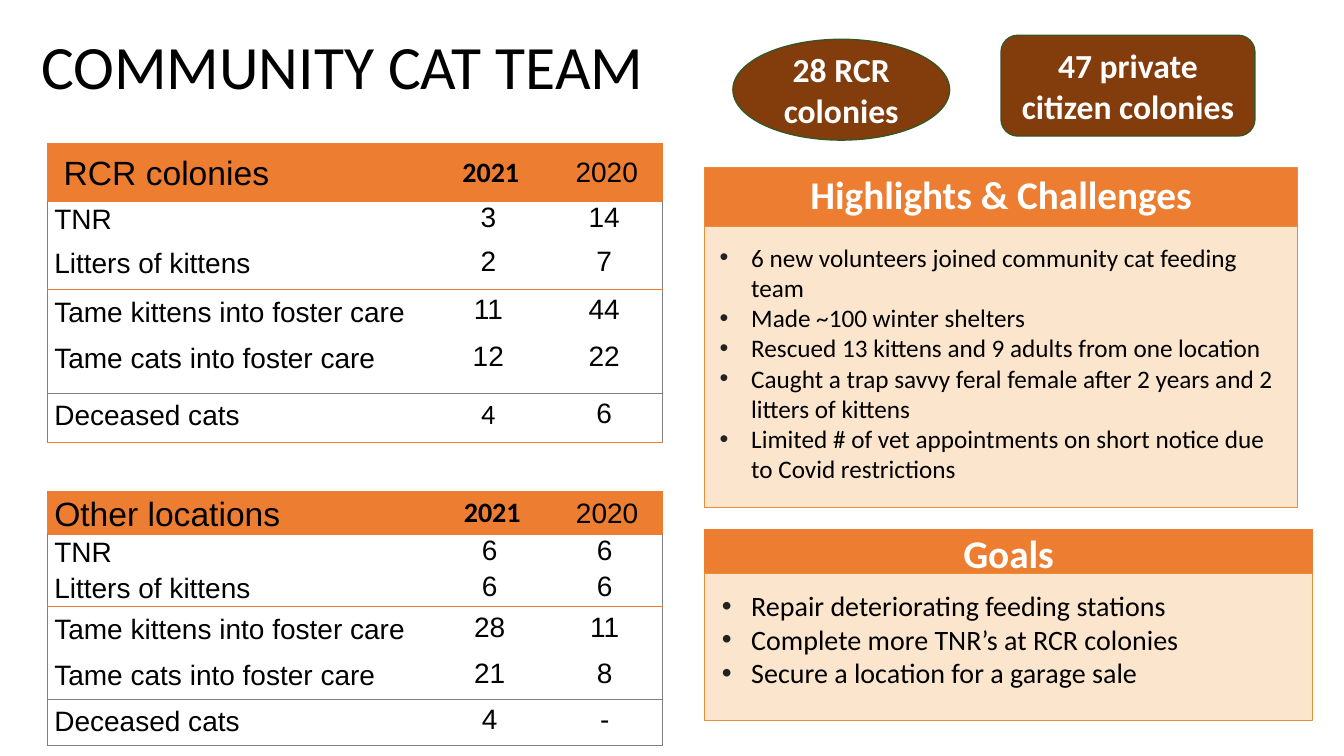
"""Build the Community Cat Team slide."""
from lxml.etree import SubElement
from pptx import Presentation
from pptx.dml.color import RGBColor
from pptx.enum.shapes import MSO_SHAPE
from pptx.enum.text import MSO_ANCHOR, PP_ALIGN
from pptx.oxml.ns import qn
from pptx.util import Pt

ORANGE, PALE, AMBER = "ED7D31", "FCE5CD", "E69138"
BROWN, GREEN, GREY = "833C0B", "385623", "808080"
BLACK, WHITE, BULLET = "000000", "FFFFFF", "222222"


def rgb(value):
    return RGBColor.from_string(value)


class SlideBuilder:
    def __init__(self, slide, font="Calibri", table_font="Arial"):
        self.slide = slide
        self.font = font
        self.table_font = table_font

    def frame(self, frame, margins, anchor):
        frame.word_wrap = True
        frame.vertical_anchor = anchor
        (frame.margin_left, frame.margin_top,
         frame.margin_right, frame.margin_bottom) = map(Pt, margins)

    def run(self, paragraph, text, size, color=BLACK, bold=False, font=None):
        run = paragraph.add_run()
        run.text = text
        run.font.name = font or self.font
        run.font.size = Pt(size)
        run.font.bold = bold
        run.font.color.rgb = rgb(color)

    def title(self, box, text):
        frame = self.slide.shapes.add_textbox(*map(Pt, box)).text_frame
        self.frame(frame, (7.2, 3.6, 7.2, 3.6), MSO_ANCHOR.MIDDLE)
        frame.paragraphs[0].line_spacing = 0.9
        self.run(frame.paragraphs[0], text, 44)

    def block(self, kind, box, fill, line):
        shape = self.slide.shapes.add_shape(kind, *map(Pt, box))
        shape.shadow.inherit = False
        shape.fill.solid()
        shape.fill.fore_color.rgb = rgb(fill)
        shape.line.color.rgb = rgb(line)
        shape.line.width = Pt(1)
        return shape.text_frame

    def caption(self, kind, box, text, size, fill, line, margins, spacing=1.0):
        frame = self.block(kind, box, fill, line)
        self.frame(frame, margins, MSO_ANCHOR.MIDDLE)
        paragraph = frame.paragraphs[0]
        paragraph.alignment = PP_ALIGN.CENTER
        paragraph.line_spacing = spacing
        self.run(paragraph, text, size, WHITE, bold=True)

    def badge(self, kind, box, text):
        self.caption(kind, box, text, 24, BROWN, GREEN, (7.2, 3.6, 7.2, 3.6))

    def panel(self, heading_box, body_box, heading, line, items, size, hang):
        self.caption(MSO_SHAPE.RECTANGLE, heading_box, heading, 28, ORANGE, line,
                     (14.4, 8.64, 14.4, 8.64), 0.9)
        frame = self.block(MSO_SHAPE.RECTANGLE, body_box, PALE, AMBER)
        self.frame(frame, (10.8, 10.8, 14.4, 16.5), MSO_ANCHOR.TOP)
        for index, item in enumerate(items):
            paragraph = frame.add_paragraph() if index else frame.paragraphs[0]
            paragraph.alignment = PP_ALIGN.LEFT
            self.bullet(paragraph, hang)
            self.run(paragraph, item, size)

    def bullet(self, paragraph, hang):
        properties = paragraph._p.get_or_add_pPr()
        properties.set("marL", str(Pt(22.5)))
        properties.set("indent", str(-Pt(hang)))
        color = SubElement(properties, qn("a:buClr"))
        SubElement(color, qn("a:srgbClr"), val=BULLET)
        SubElement(properties, qn("a:buFont"), typeface="Arial")
        SubElement(properties, qn("a:buChar"), char="•")

    def borders(self, cell, **colors):
        properties = cell._tc.get_or_add_tcPr()
        for side in "LRTB":
            edge = SubElement(properties, qn(f"a:ln{side}"), w=str(Pt(0.75)))
            if colors.get(side):
                fill = SubElement(edge, qn("a:solidFill"))
                SubElement(fill, qn("a:srgbClr"), val=colors[side])
            else:
                SubElement(edge, qn("a:noFill"))

    def table(self, left, top, widths, rows, heading_inset, calibri_cells):
        height = sum(row[0] for row in rows)
        box = map(Pt, (left, top, sum(widths), height))
        table = self.slide.shapes.add_table(len(rows), len(widths), *box).table
        table.first_row = table.horz_banding = False
        for column, width in zip(table.columns, widths):
            column.width = Pt(width)
        rule_above = ORANGE
        for r, (row_height, pad, rule, texts) in enumerate(rows):
            table.rows[r].height = Pt(row_height)
            side = GREY if r else ORANGE
            for c, text in enumerate(texts):
                cell = table.cell(r, c)
                self.borders(cell, L=None if c else side, T=rule_above, B=rule,
                             R=side if c == len(widths) - 1 else None)
                cell.margin_left = cell.margin_right = Pt(5)
                cell.margin_top = cell.margin_bottom = Pt(pad)
                if r:
                    cell.fill.background()
                else:
                    cell.fill.solid()
                    cell.fill.fore_color.rgb = rgb(ORANGE)
                    cell.margin_left = Pt(8.6 if c else heading_inset)
                    cell.vertical_anchor = MSO_ANCHOR.MIDDLE
                paragraph = cell.text_frame.paragraphs[0]
                paragraph.alignment = PP_ALIGN.CENTER if c else PP_ALIGN.LEFT
                paragraph.line_spacing = 1.0 if c else 1.07
                calibri = (r, c) in calibri_cells
                self.run(paragraph, text, 20 if r or c else 24,
                         bold=calibri and r == 0,
                         font=self.font if calibri else self.table_font)
            rule_above = rule


def main():
    deck = Presentation()
    deck.slide_width, deck.slide_height = Pt(960), Pt(540)
    builder = SlideBuilder(deck.slides.add_slide(deck.slide_layouts[6]))

    builder.title((22.3, 0, 828, 100), "COMMUNITY CAT TEAM")
    builder.panel(
        (503.3, 119.5, 423.4, 42.5), (503.3, 162, 423.4, 200.5),
        "Highlights & Challenges", AMBER,
        ["6 new volunteers joined community cat feeding team",
         "Made ~100 winter shelters",
         "Rescued 13 kittens and 9 adults from one location",
         "Caught a trap savvy feral female after 2 years and 2 litters of kittens",
         "Limited # of vet appointments on short notice due to Covid restrictions"],
        18, 22.5)
    builder.panel(
        (503.3, 378, 434.2, 37.5), (503.3, 409.7, 434.2, 105),
        "Goals", ORANGE,
        ["Repair deteriorating feeding stations",
         "Complete more TNR’s at RCR colonies",
         "Secure a location for a garage sale"],
        20, 21)
    builder.table(
        33.8, 102.2, (273.6, 82.8, 82.8),
        [(42, 0, ORANGE, ("RCR colonies", "2021", "2020")),
         (28, 0, None, ("TNR", "3", "14")),
         (34.7, 3.6, ORANGE, ("Litters of kittens", "2", "7")),
         (31.5, 3.6, None, ("Tame kittens into foster care", "11", "44")),
         (41, 3.6, GREY, ("Tame cats into foster care", "12", "22")),
         (35, 3.6, ORANGE, ("Deceased cats", "4", "6"))],
        11.7, {(0, 1), (5, 1)})
    builder.table(
        33.8, 351.2, (275, 82.1, 82.1),
        [(28.5, 0, ORANGE, ("Other locations", "2021", "2020")),
         (23.8, 0, None, ("TNR", "6", "6")),
         (23.8, 0, ORANGE, ("Litters of kittens", "6", "6")),
         (31, 3.6, None, ("Tame kittens into foster care", "28", "11")),
         (31, 3.6, GREY, ("Tame cats into foster care", "21", "8")),
         (31, 3.6, GREY, ("Deceased cats", "4", "-"))],
        5, {(0, 1)})
    builder.badge(MSO_SHAPE.OVAL, (523.5, 28.1, 154.8, 72), "28 RCR colonies")
    builder.badge(MSO_SHAPE.ROUNDED_RECTANGLE, (715, 25.2, 181.4, 72),
                  "47 private citizen colonies")
    deck.save("out.pptx")


if __name__ == "__main__":
    main()
